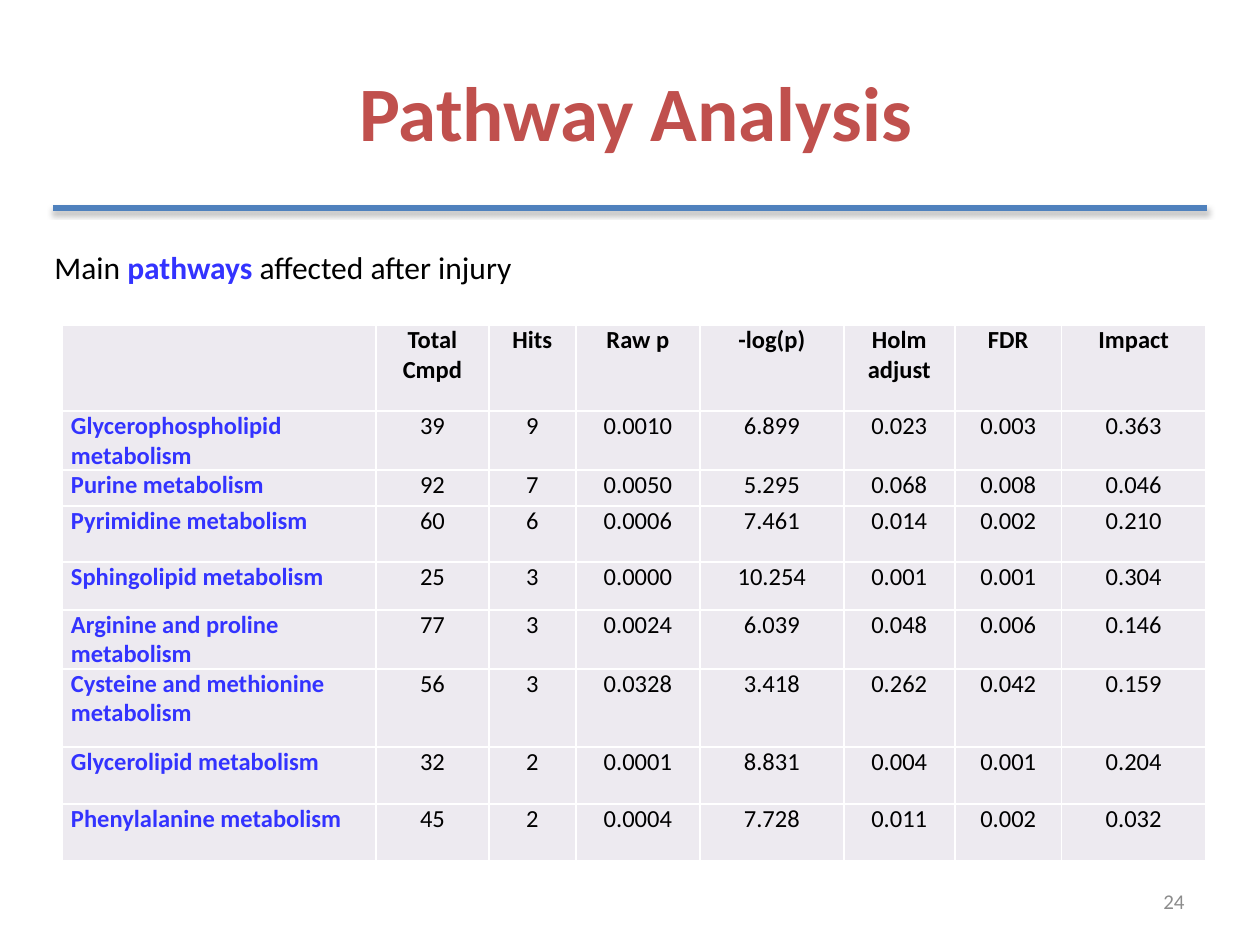
import pptx
import pptx.util
import pptx.dml.color
import pptx.enum.shapes
import pptx.enum.text
import pptx.oxml
import pptx.oxml.ns

PX = 914400 // 126
RED = pptx.dml.color.RGBColor(0xC0, 0x50, 0x4D)
RULE_BLUE = pptx.dml.color.RGBColor(0x4F, 0x81, 0xBD)
TEXT_BLUE = pptx.dml.color.RGBColor(0x33, 0x33, 0xFF)
BLACK = pptx.dml.color.RGBColor(0, 0, 0)
GRAY = pptx.dml.color.RGBColor(0x8C, 0x8C, 0x8C)
LAVENDER = pptx.dml.color.RGBColor(0xED, 0xEA, 0xF0)
LEFT = pptx.enum.text.PP_ALIGN.LEFT
CENTER = pptx.enum.text.PP_ALIGN.CENTER
RIGHT = pptx.enum.text.PP_ALIGN.RIGHT
TOP = pptx.enum.text.MSO_ANCHOR.TOP
MIDDLE = pptx.enum.text.MSO_ANCHOR.MIDDLE
NAMESPACE = pptx.oxml.ns.nsdecls("a")


def add_run(paragraph, text, size, color, bold=False):
    run = paragraph.add_run()
    run.text = text
    run.font.name = "Calibri"
    run.font.size = pptx.util.Pt(size)
    run.font.bold = bold
    run.font.color.rgb = color


def add_text(box, anchor, alignment, runs, wrap=True):
    shape = slide.shapes.add_textbox(*[value * PX for value in box])
    frame = shape.text_frame
    frame.word_wrap = wrap
    frame.vertical_anchor = anchor
    paragraph = frame.paragraphs[0]
    paragraph.alignment = alignment
    for run in runs:
        add_run(paragraph, *run)
    return shape


presentation = pptx.Presentation()
presentation.slide_width = 1260 * PX
presentation.slide_height = 945 * PX
slide = presentation.slides.add_slide(presentation.slide_layouts[6])

rule = slide.shapes.add_connector(
    pptx.enum.shapes.MSO_CONNECTOR.STRAIGHT, 53 * PX, 208 * PX, 1207 * PX, 208 * PX)
rule.line.color.rgb = RULE_BLUE
rule.line.width = pptx.util.Pt(3)
rule._element.spPr.append(pptx.oxml.parse_xml(
    f'<a:effectLst {NAMESPACE}><a:outerShdw blurRad="39370" dist="22860" dir="5400000" '
    'rotWithShape="0"><a:srgbClr val="000000"><a:alpha val="35000"/></a:srgbClr>'
    '</a:outerShdw></a:effectLst>'))

add_text((179, 32, 914, 158), MIDDLE, CENTER, [("Pathway Analysis", 44, RED, True)])

rows = [
    ("", "Total Cmpd", "Hits", "Raw p", "-log(p)", "Holm adjust", "FDR", "Impact"),
    ("Glycerophospholipid metabolism", "39", "9", "0.0010", "6.899", "0.023", "0.003", "0.363"),
    ("Purine metabolism", "92", "7", "0.0050", "5.295", "0.068", "0.008", "0.046"),
    ("Pyrimidine metabolism", "60", "6", "0.0006", "7.461", "0.014", "0.002", "0.210"),
    ("Sphingolipid metabolism", "25", "3", "0.0000", "10.254", "0.001", "0.001", "0.304"),
    ("Arginine and proline metabolism", "77", "3", "0.0024", "6.039", "0.048", "0.006", "0.146"),
    ("Cysteine and methionine metabolism", "56", "3", "0.0328", "3.418", "0.262", "0.042", "0.159"),
    ("Glycerolipid metabolism", "32", "2", "0.0001", "8.831", "0.004", "0.001", "0.204"),
    ("Phenylalanine metabolism", "45", "2", "0.0004", "7.728", "0.011", "0.002", "0.032"),
]
column_widths = [314, 113, 87, 124, 144, 111, 107, 144]
row_heights = [86, 59, 36, 56, 48, 59, 78, 57, 57]
table = slide.shapes.add_table(
    len(rows), len(column_widths), 62 * PX, 325 * PX,
    sum(column_widths) * PX, sum(row_heights) * PX).table
for column, width in zip(table.columns, column_widths):
    column.width = width * PX
for row, height in zip(table.rows, row_heights):
    row.height = height * PX

for row_index, values in enumerate(rows):
    for column_index, value in enumerate(values):
        cell = table.cell(row_index, column_index)
        cell.margin_left = cell.margin_right = 9 * PX
        cell.margin_top = cell.margin_bottom = 0
        for side in ("lnL", "lnR", "lnT", "lnB"):
            cell._tc.get_or_add_tcPr().append(pptx.oxml.parse_xml(
                f'<a:{side} {NAMESPACE} w="12700"><a:solidFill><a:srgbClr val="FFFFFF"/>'
                f'</a:solidFill></a:{side}>'))
        cell.fill.solid()
        cell.fill.fore_color.rgb = LAVENDER
        if value:
            is_name = column_index == 0
            paragraph = cell.text_frame.paragraphs[0]
            paragraph.alignment = LEFT if is_name else CENTER
            add_run(paragraph, value, 14, TEXT_BLUE if is_name else BLACK,
                    is_name or row_index == 0)

add_text((903, 876, 294, 50), MIDDLE, RIGHT, [("24", 12, GRAY)])
caption = add_text((42, 242, 485, 50), TOP, LEFT, [
    ("Main ", 18, BLACK),
    ("pathways ", 18, TEXT_BLUE, True),
    ("affected after injury", 18, BLACK),
], wrap=False)
caption.text_frame.auto_size = pptx.enum.text.MSO_AUTO_SIZE.SHAPE_TO_FIT_TEXT

presentation.save("out.pptx")
